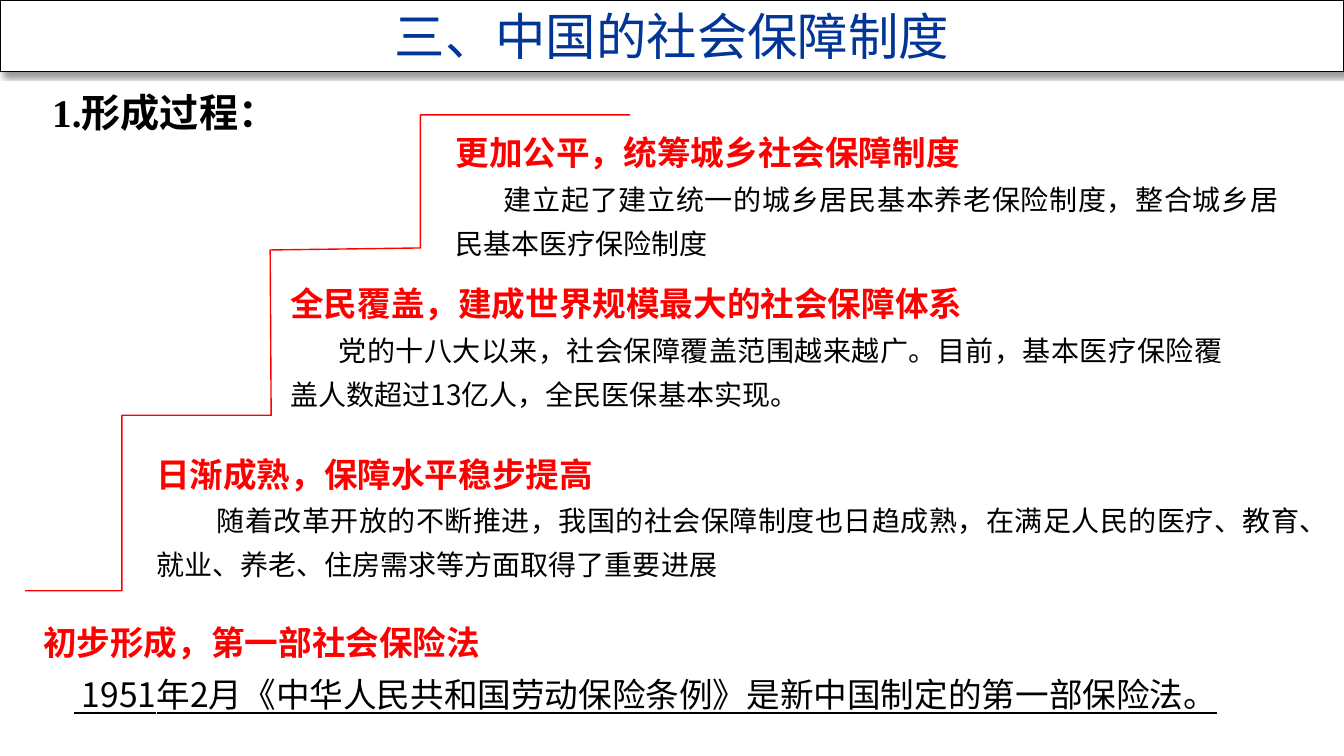
from lxml import etree
from pptx import Presentation
from pptx.dml.color import RGBColor
from pptx.enum.shapes import MSO_SHAPE
from pptx.enum.text import MSO_ANCHOR, PP_ALIGN
from pptx.oxml import parse_xml
from pptx.oxml.ns import qn
from pptx.util import Inches, Pt

RECT = MSO_SHAPE.RECTANGLE
MIDDLE = MSO_ANCHOR.MIDDLE
CENTER, LEFT, JUSTIFY = PP_ALIGN.CENTER, PP_ALIGN.LEFT, PP_ALIGN.JUSTIFY
RED = RGBColor(0xFF, 0x00, 0x00)
BLUE = RGBColor(0x01, 0x35, 0x96)
BLACK = RGBColor(0x00, 0x00, 0x00)
WHITE = RGBColor(0xFF, 0xFF, 0xFF)
SANS, SERIF = "Noto Sans CJK SC", "Times New Roman"
W, H = 13.33, 7.5
SHADOW = (
    '<a:effectLst xmlns:a="http://schemas.openxmlformats.org/drawingml/2006/main">'
    '<a:outerShdw blurRad="50800" dist="38100" dir="2700000" algn="tl" rotWithShape="0">'
    '<a:srgbClr val="000000"><a:alpha val="40000"/></a:srgbClr>'
    '</a:outerShdw></a:effectLst>'
)

STAGES = [
    ((0.33, 6, 12.9, 1.24), "初步形成，第一部社会保险法",
     " 1951年2月《中华人民共和国劳动保险条例》是新中国制定的第一部保险法。",
     dict(size=24, indent=0.31, underline=True)),
    ((1.45, 4.33, 11.54, 1.5), "日渐成熟，保障水平稳步提高",
     "随着改革开放的不断推进，我国的社会保障制度也日趋成熟，在满足人民的医疗、教育、"
     "就业、养老、住房需求等方面取得了重要进展", dict(indent=0.6)),
    ((2.78, 2.64, 9.44, 1.5), "全民覆盖，建成世界规模最大的社会保障体系",
     "党的十八大以来，社会保障覆盖范围越来越广。目前，基本医疗保险覆盖人数超过13亿人，"
     "全民医保基本实现。", {}),
    ((4.42, 1.14, 8.36, 1.5), "更加公平，统筹城乡社会保障制度",
     "建立起了建立统一的城乡居民基本养老保险制度，整合城乡居民基本医疗保险制度", {}),
]
STAIRS = [(0.25, 5.86), (1.21, 5.86), (1.21, 4.12), (2.69, 4.12), (2.68, 2.48),
          (4.17, 2.46), (4.17, 1.14), (6.25, 1.14)]


def add_run(p, text, size=20, font=SANS, color=BLACK, bold=False, underline=False):
    """Append a formatted run, with the sans font for Chinese characters."""
    r = p.add_run()
    r.text = text
    f = r.font
    f.size, f.name, f.bold, f.underline = Pt(size), font, bold, underline
    f.color.rgb = color
    f._element.find(qn("a:latin")).addnext(
        etree.Element(qn("a:ea"), typeface=SANS))


def add_box(s, box):
    """Add a wrapping text box and return its text frame."""
    tf = s.shapes.add_textbox(*map(Inches, box)).text_frame
    tf.word_wrap = True
    return tf


def add_title(s, box, text):
    """Draw the shadowed title bar."""
    sp = s.shapes.add_shape(RECT, *map(Inches, box))
    sp.fill.solid()
    sp.fill.fore_color.rgb = WHITE
    sp.line.color.rgb = BLACK
    sp.line.width = Pt(1)
    sp._element.spPr.append(parse_xml(SHADOW))
    tf = sp.text_frame
    tf.vertical_anchor = MIDDLE
    p = tf.paragraphs[0]
    p.alignment = CENTER
    add_run(p, text, size=36, font=SERIF, color=BLUE)


def add_heading(s, box, text):
    """Write the section heading."""
    p = add_box(s, box).paragraphs[0]
    p.alignment = LEFT
    add_run(p, text, size=28, font=SERIF, bold=True)


def add_stage(s, box, heading, body, size=20, indent=0.48, underline=False):
    """Write one stage: red heading and a body with an indented first line."""
    tf = add_box(s, box)
    head, p = tf.paragraphs[0], tf.add_paragraph()
    for para in (head, p):
        para.alignment = JUSTIFY
        para.line_spacing = 1.3
    add_run(head, heading, size=24, color=RED, bold=True)
    pPr = p._p.get_or_add_pPr()
    pPr.set("marL", "0")
    pPr.set("indent", str(Inches(indent)))
    add_run(p, body, size=size, underline=underline)


def add_stairs(s, points):
    """Draw the open red staircase."""
    start, *rest = [(Inches(x), Inches(y)) for x, y in points]
    builder = s.shapes.build_freeform(*start)
    builder.add_line_segments(rest, close=False)
    sp = builder.convert_to_shape()
    sp.shadow.inherit = False
    sp.fill.background()
    sp.line.color.rgb = RED
    sp.line.width = Pt(1)


def main():
    """Build and save the slide."""
    prs = Presentation()
    prs.slide_width, prs.slide_height = Inches(W), Inches(H)
    s = prs.slides.add_slide(prs.slide_layouts[6])
    for box, heading, body, style in STAGES:
        add_stage(s, box, heading, body, **style)
    add_title(s, (0, 0, W, 0.71), "三、中国的社会保障制度")
    add_heading(s, (0.42, 0.83, 3.57, 0.58), "1.形成过程：")
    add_stairs(s, STAIRS)
    prs.save("out.pptx")


if __name__ == "__main__":
    main()
